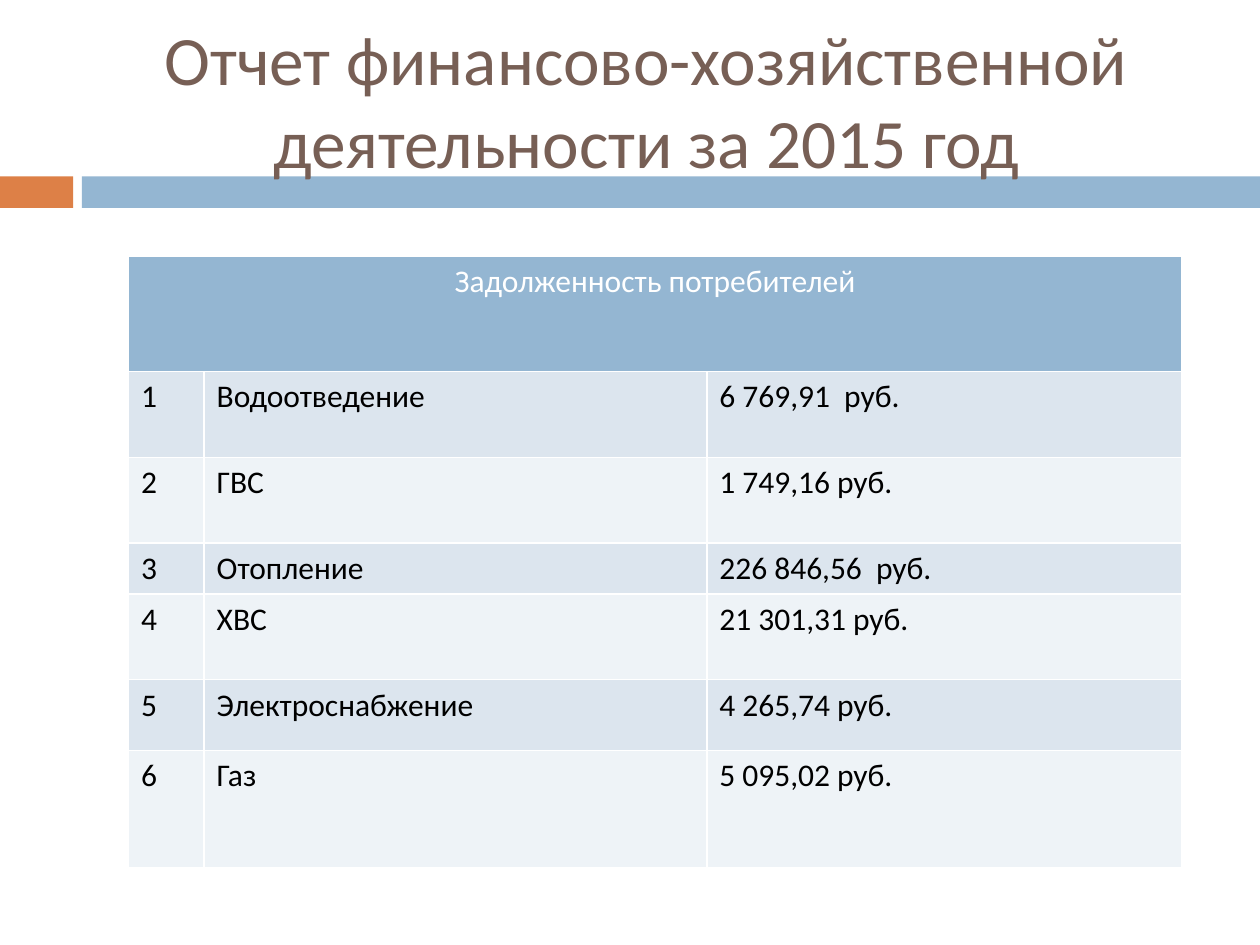
from lxml.etree import SubElement
from pptx import Presentation
from pptx.dml.color import RGBColor
from pptx.enum.shapes import MSO_SHAPE as Shape
from pptx.enum.text import MSO_ANCHOR as Anchor, MSO_AUTO_SIZE as AutoSize, PP_ALIGN as Align
from pptx.oxml.ns import qn
from pptx.util import Inches, Pt

TITLE = "Отчет финансово-хозяйственной деятельности за 2015 год"
TABLE_HEADING = "Задолженность потребителей"
DEBTS = [
    ("Водоотведение", "6 769,91  руб."),
    ("ГВС", "1 749,16 руб."),
    ("Отопление", "226 846,56  руб."),
    ("ХВС", "21 301,31 руб."),
    ("Электроснабжение", "4 265,74 руб."),
    ("Газ", "5 095,02 руб."),
]
FONT = "Calibri"
COLORS = {
    "orange": "DD8047",
    "blue": "94B6D2",
    "brown": "775F55",
    "white": "FFFFFF",
    "black": "000000",
    "band_dark": "DCE5EE",
    "band_light": "EEF3F7",
}
BARS = [(0, 0.58, "orange"), (0.65, 9.35, "blue")]  # left, width, color
COLUMN_WIDTHS = [0.6, 3.99, 3.77]
ROW_HEIGHTS = [0.92, 0.68, 0.68, 0.4, 0.68, 0.56, 0.93]


def rgb(name):
    return RGBColor.from_string(COLORS[name])


def write(frame, text, size, color, align):
    para = frame.paragraphs[0]
    para.alignment = align
    span = para.add_run()
    span.text = text
    span.font.name = FONT
    span.font.size = Pt(size)
    span.font.bold = False
    span.font.color.rgb = rgb(color)


def add_borders(cell, color, points):
    properties = cell._tc.get_or_add_tcPr()
    for side in ("lnL", "lnR", "lnT", "lnB"):
        line = SubElement(properties, qn(f"a:{side}"), w=str(Pt(points)))
        fill = SubElement(line, qn("a:solidFill"))
        SubElement(fill, qn("a:srgbClr"), val=COLORS[color])


def style_cell(cell, fill):
    add_borders(cell, "white", 1)
    cell.fill.solid()
    cell.fill.fore_color.rgb = rgb(fill)


def add_bars(slide):
    for left, width, color in BARS:
        bar = slide.shapes.add_shape(
            Shape.RECTANGLE, Inches(left), Inches(1.4), Inches(width), Inches(0.25))
        bar.shadow.inherit = False
        bar.fill.solid()
        bar.fill.fore_color.rgb = rgb(color)
        bar.line.fill.background()


def place_title(slide):
    """Format the title and bring it in front of the bars."""
    title = slide.shapes.title
    title.left, title.top = Inches(0.67), Inches(0.25)
    title.width, title.height = Inches(8.92), Inches(1.08)
    frame = title.text_frame
    frame.word_wrap = True
    frame.auto_size = AutoSize.NONE
    frame.vertical_anchor = Anchor.MIDDLE
    write(frame, TITLE, 39.6, "brown", Align.CENTER)
    slide.shapes._spTree.append(title.element)


def add_debt_table(slide):
    table = slide.shapes.add_table(
        len(ROW_HEIGHTS), len(COLUMN_WIDTHS), Inches(1.02), Inches(2.03),
        Inches(sum(COLUMN_WIDTHS)), Inches(sum(ROW_HEIGHTS))).table
    for column, width in zip(table.columns, COLUMN_WIDTHS):
        column.width = Inches(width)
    for row, height in zip(table.rows, ROW_HEIGHTS):
        row.height = Inches(height)

    for cell in table.rows[0].cells:
        style_cell(cell, "blue")
    heading = table.cell(0, 0)
    heading.merge(table.cell(0, len(COLUMN_WIDTHS) - 1))
    write(heading.text_frame, TABLE_HEADING, 18, "white", Align.CENTER)

    for number, debt in enumerate(DEBTS, start=1):
        band = "band_dark" if number % 2 else "band_light"
        for cell, text in zip(table.rows[number].cells, (str(number), *debt)):
            style_cell(cell, band)
            write(cell.text_frame, text, 18, "black", Align.LEFT)


def main():
    deck = Presentation()
    deck.slide_width, deck.slide_height = Inches(10), Inches(7.5)
    page = deck.slides.add_slide(deck.slide_layouts[5])
    add_bars(page)
    place_title(page)
    add_debt_table(page)
    deck.save("out.pptx")


if __name__ == "__main__":
    main()
